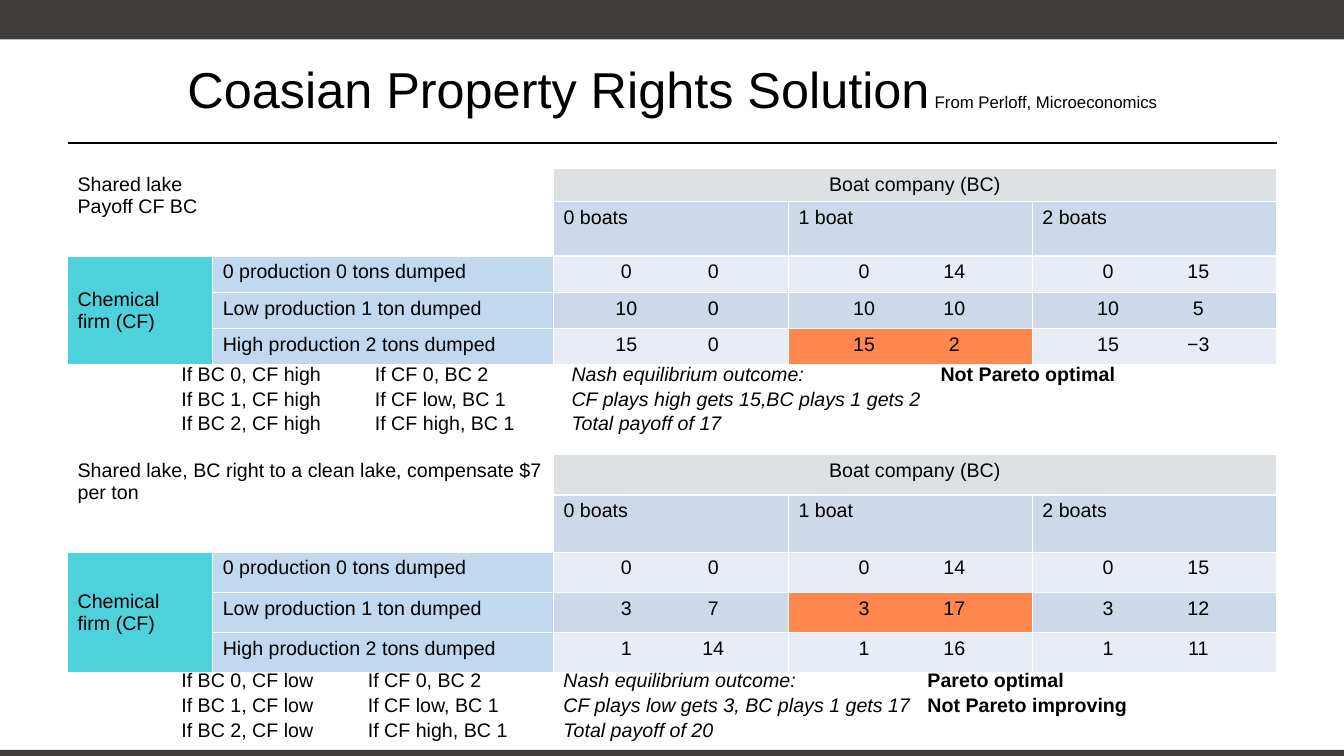
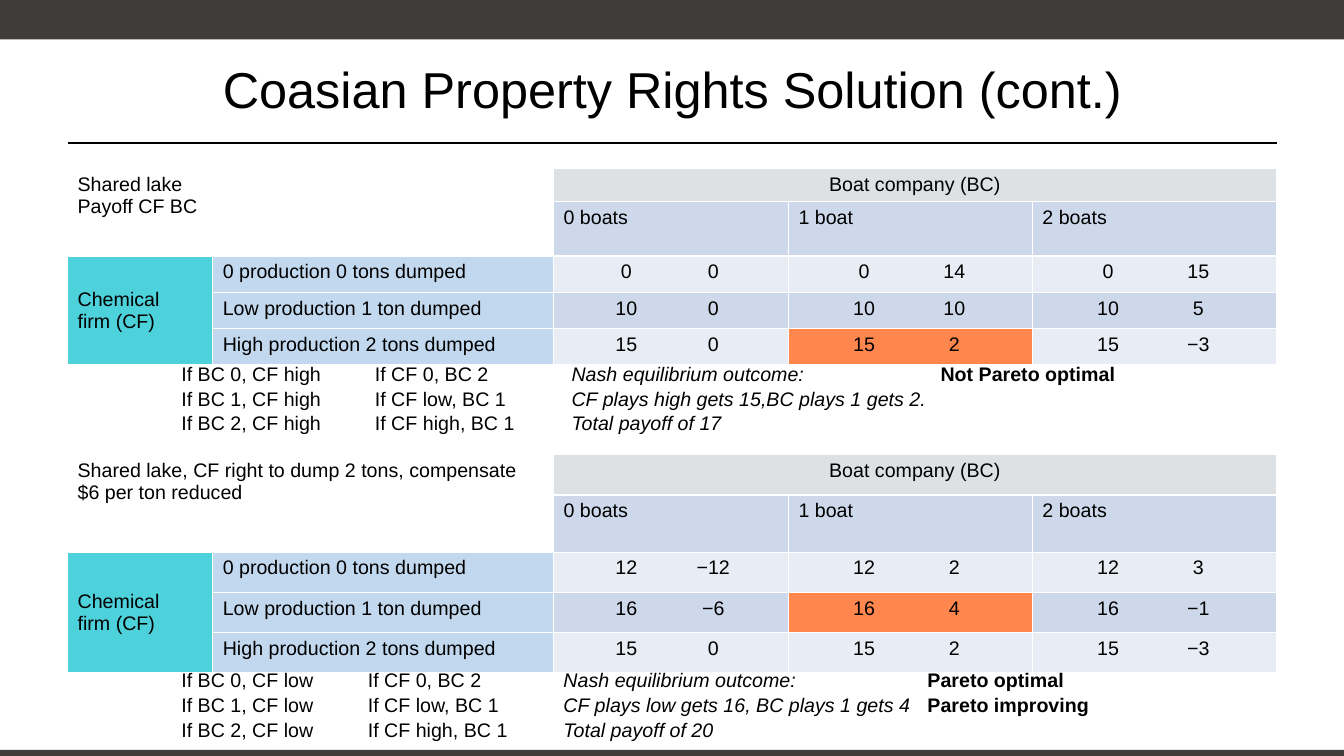
from lxml.etree import SubElement
from pptx import Presentation
from pptx.dml.color import RGBColor
from pptx.enum.shapes import MSO_CONNECTOR, MSO_SHAPE
from pptx.enum.text import MSO_ANCHOR, PP_ALIGN
from pptx.oxml.ns import qn
from pptx.util import Inches, Pt

FONT = "Arial"
BLACK, BAND = "000000", "3E3D3C"
HEADER, FIRM, PRODUCTION = "DEE1E3", "4DD1DA", "C2D8EE"
LIGHT, DARK, OUTCOME = "E8EDF5", "CDD9EA", "FF864C"

LEFT, WIDTH = 0.67, 12
COLUMNS = [1.44, 3.38, 2.33, 2.42, 2.42]
PAYOFF_STOPS = (0.31, 0.68)  # shares of the column width
CELL_MARGIN = 0.1
BOATS = ["0 boats", "1 boat", "2 boats"]
PRODUCTIONS = ["0 production 0 tons dumped", "Low production 1 ton dumped",
               "High production 2 tons dumped"]
BOAT_REPLIES = ["If CF 0, BC 2", "If CF low, BC 1", "If CF high, BC 1"]

SHARED_LAKE = [[("0", "0"), ("0", "14"), ("0", "15")],
               [("10", "0"), ("10", "10"), ("10", "5")],
               [("15", "0"), ("15", "2"), ("15", "−3")]]
CLEAN_LAKE_RIGHT = [[("0", "0"), ("0", "14"), ("0", "15")],
                    [("3", "7"), ("3", "17"), ("3", "12")],
                    [("1", "14"), ("1", "16"), ("1", "11")]]
DUMPING_RIGHT = [[("12", "−12"), ("12", "2"), ("12", "3")],
                 [("16", "−6"), ("16", "4"), ("16", "−1")],
                 [("15", "0"), ("15", "2"), ("15", "−3")]]


def rgb(color):
    return RGBColor.from_string(color)


def set_font(p, size):
    p.font.name = FONT
    p.font.size = Pt(size)
    p.font.color.rgb = rgb(BLACK)


def set_tabs(p, stops, align):
    """Give the paragraph tab stops, in inches from the text's left edge."""
    tabs = SubElement(p._p.get_or_add_pPr(), qn("a:tabLst"))
    for stop in stops:
        SubElement(tabs, qn("a:tab"), pos=str(Inches(stop)), algn=align)


def add_run(p, text, italic=None, bold=None):
    r = p.add_run()
    r.text = text
    r.font.italic = italic
    r.font.bold = bold
    return r


def add_frame(slide, layout):
    """Draw the bands and the title rule, and keep them on the layout."""
    frame = []
    for top, height in ((0, 0.39), (7.44, 0.1)):
        sp = slide.shapes.add_shape(MSO_SHAPE.RECTANGLE, 0, Inches(top),
                                    Inches(13.33), Inches(height))
        sp.shadow.inherit = False
        sp.fill.solid()
        sp.fill.fore_color.rgb = rgb(BAND)
        sp.line.fill.background()
        frame.append(sp)
    rule = slide.shapes.add_connector(MSO_CONNECTOR.STRAIGHT, Inches(LEFT), Inches(1.42),
                                      Inches(LEFT + WIDTH), Inches(1.42))
    rule.line.color.rgb = rgb(BLACK)
    rule.line.width = Pt(1.25)
    SubElement(rule.element.spPr, qn("a:effectLst"))
    frame.append(rule)
    for sp in frame:
        layout.element.cSld.spTree.append(sp.element)


def add_title(slide, text, credit=None):
    title = slide.shapes.title
    title.left, title.top = Inches(LEFT), Inches(0.25)
    title.width, title.height = Inches(WIDTH), Inches(1.25)
    tf = title.text_frame
    tf.vertical_anchor = MSO_ANCHOR.MIDDLE
    p = tf.paragraphs[0]
    p.alignment = PP_ALIGN.CENTER
    set_font(p, 36)
    add_run(p, text)
    if credit:
        add_run(p, " " + credit).font.size = Pt(12)


def fill_cell(cell, color, text=None, align=None, tabs=()):
    if color:
        cell.fill.solid()
        cell.fill.fore_color.rgb = rgb(color)
    else:
        cell.fill.background()
    if text is None:
        return
    cell.text = text
    for p in cell.text_frame.paragraphs:
        p.alignment = align
        if tabs:
            set_tabs(p, tabs, "ctr")
        set_font(p, 14)


def add_payoff_table(slide, top, heights, caption, payoffs, outcome):
    """Add a payoff matrix; outcome is the (production, boats) cell to highlight."""
    table = slide.shapes.add_table(len(heights), len(COLUMNS), Inches(LEFT), Inches(top),
                                   Inches(WIDTH), Inches(sum(heights))).table
    table.first_row = table.horz_banding = False
    for column, width in zip(table.columns, COLUMNS):
        column.width = Inches(width)
    for row, height in zip(table.rows, heights):
        row.height = Inches(height)

    for (r1, c1), (r2, c2) in (((0, 0), (1, 1)), ((0, 2), (0, 4)), ((2, 0), (4, 0))):
        table.cell(r1, c1).merge(table.cell(r2, c2))
    fill_cell(table.cell(0, 0), None, caption)
    fill_cell(table.cell(0, 2), HEADER, "Boat company (BC)", PP_ALIGN.CENTER)
    fill_cell(table.cell(2, 0), FIRM, "Chemical\vfirm (CF)")
    table.cell(2, 0).vertical_anchor = MSO_ANCHOR.MIDDLE

    for c, boats in enumerate(BOATS):
        fill_cell(table.cell(1, c + 2), DARK, boats)
    for r, (production, pairs) in enumerate(zip(PRODUCTIONS, payoffs)):
        fill_cell(table.cell(r + 2, 1), PRODUCTION, production)
        for c, (firm, boat) in enumerate(pairs):
            color = OUTCOME if (r, c) == outcome else DARK if r % 2 else LIGHT
            tabs = [share * COLUMNS[c + 2] - CELL_MARGIN for share in PAYOFF_STOPS]
            fill_cell(table.cell(r + 2, c + 2), color, f"\t{firm}\t{boat}",
                      PP_ALIGN.LEFT, tabs)


def add_notes(slide, top, height, tabs, firm_reply, plays, total, verdicts):
    """List both sides' best replies, the equilibrium and the verdicts on it."""
    tf = slide.shapes.add_textbox(Inches(1.7), Inches(top), Inches(9.95),
                                  Inches(height)).text_frame
    tf.word_wrap = True
    outcomes = ["Nash equilibrium outcome:", plays, f"Total payoff of {total}"]
    for i, (boat_reply, outcome) in enumerate(zip(BOAT_REPLIES, outcomes)):
        p = tf.add_paragraph() if i else tf.paragraphs[0]
        p.space_after = Pt(0.8)
        set_tabs(p, tabs, "l")
        set_font(p, 14)
        add_run(p, f"If BC {i}, CF {firm_reply}\t{boat_reply}\t")
        add_run(p, outcome, italic=True)
        if i < len(verdicts):
            add_run(p, "\t" + verdicts[i], bold=True)


def add_content(slide, shared_plays, right, payoffs, right_plays, right_verdicts):
    """Set the shared lake above the same game under a property right."""
    add_payoff_table(slide, 1.67, [0.33, 0.54] + [0.36] * 3,
                     "Shared lake\nPayoff CF BC", SHARED_LAKE, (2, 1))
    add_notes(slide, 3.54, 1.04, (1.92, 3.87, 7.53), "high", shared_plays, 17,
              ["Not Pareto optimal"])
    add_payoff_table(slide, 4.51, [0.4, 0.54] + [0.4] * 3,
                     f"Shared lake, {right}", payoffs, (1, 1))
    add_notes(slide, 6.58, 0.81, (1.85, 3.79, 7.4), "low", right_plays, 20,
              right_verdicts)


def main():
    prs = Presentation()
    prs.slide_width, prs.slide_height = Inches(13.33), Inches(7.5)
    layout = prs.slide_layouts[5]

    s = prs.slides.add_slide(layout)
    add_frame(s, layout)
    add_title(s, "Coasian Property Rights Solution", "From Perloff, Microeconomics")
    add_content(s, "CF plays high gets 15,BC plays 1 gets 2",
                "BC right to a clean lake, compensate $7 per ton", CLEAN_LAKE_RIGHT,
                "CF plays low gets 3, BC plays 1 gets 17",
                ["Pareto optimal", "Not Pareto improving"])

    s = prs.slides.add_slide(layout)
    add_title(s, "Coasian Property Rights Solution (cont.)")
    add_content(s, "CF plays high gets 15,BC plays 1 gets 2.",
                "CF right to dump 2 tons, compensate $6 per ton reduced", DUMPING_RIGHT,
                "CF plays low gets 16, BC plays 1 gets 4",
                ["Pareto optimal", "Pareto improving"])

    prs.save("out.pptx")


if __name__ == "__main__":
    main()
